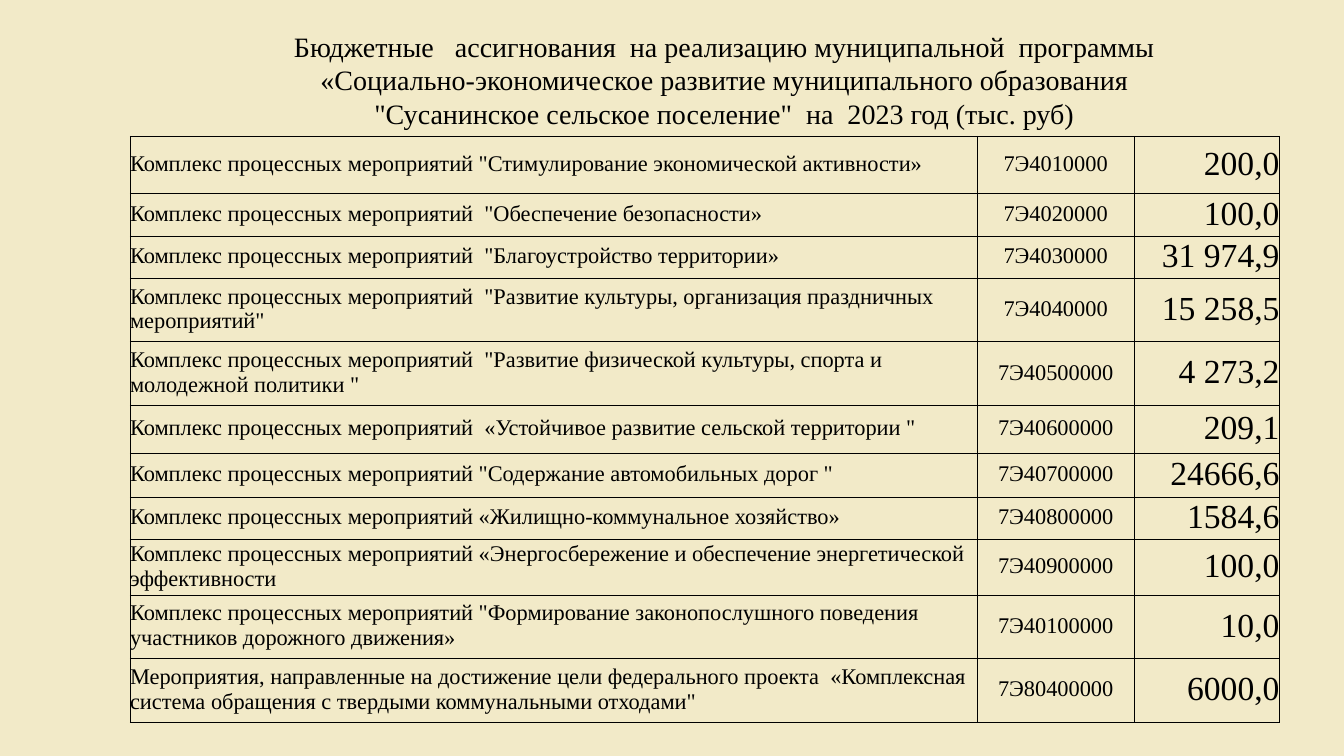
from pptx import Presentation as Deck
from pptx.dml.color import RGBColor as RGB
from pptx.enum.text import MSO_ANCHOR as Anchor, PP_ALIGN as Align
from pptx.oxml import parse_xml
from pptx.oxml.ns import nsdecls
from pptx.util import Pt

PX = 9144
SAND = RGB(0xF2, 0xEA, 0xC8)
BLACK = RGB(0, 0, 0)
FACE = "Times New Roman"
KIT = "Комплекс процессных мероприятий"
TITLE = (
    "Бюджетные   ассигнования  на реализацию муниципальной  программы "
    "«Социально-экономическое развитие муниципального образования "
    '"Сусанинское сельское поселение"  на  2023 год (тыс. руб)'
)
COLS = [
    (840, 16, Align.LEFT),
    (156, 16, Align.CENTER),
    (144, 24, Align.RIGHT),
]
ROWS = [
    (57, KIT + ' "Стимулирование экономической активности»', "7Э4010000", "200,0"),
    (38, KIT + '  "Обеспечение безопасности»', "7Э4020000", "100,0"),
    (36, KIT + '  "Благоустройство территории»', "7Э4030000", "31 974,9"),
    (63, KIT + '  "Развитие культуры, организация праздничных мероприятий"',
     "7Э4040000", "15 258,5"),
    (63, KIT + '  "Развитие физической культуры, спорта и молодежной политики "',
     "7Э40500000", "4 273,2"),
    (48, KIT + '  «Устойчивое развитие сельской территории "', "7Э40600000", "209,1"),
    (43, KIT + ' "Содержание автомобильных дорог "', "7Э40700000", "24666,6"),
    (28, KIT + " «Жилищно-коммунальное хозяйство»", "7Э40800000", "1584,6"),
    (38, KIT + " «Энергосбережение и обеспечение энергетической эффективности",
     "7Э40900000", "100,0"),
    (63, KIT + ' "Формирование законопослушного поведения участников дорожного движения»',
     "7Э40100000", "10,0"),
    (63, "Мероприятия, направленные на достижение цели федерального проекта  "
     '«Комплексная система обращения с твердыми коммунальными отходами"',
     "7Э80400000", "6000,0"),
]
FLAT = {"first_row": False, "horz_banding": False}
CELL = {
    "margin_left": 0,
    "margin_right": 0,
    "margin_top": 0,
    "margin_bottom": 2 * PX,
    "vertical_anchor": Anchor.MIDDLE,
}


def apply(item, vals):
    for name, val in vals.items():
        setattr(item, name, val)


def write(frame, text, size, align):
    para = frame.paragraphs[0]
    para.alignment = align
    run = para.add_run()
    run.text = text
    apply(run.font, {"name": FACE, "size": Pt(size)})
    run.font.color.rgb = BLACK


def border(cell):
    props = cell._tc.get_or_add_tcPr()
    for side in ("lnL", "lnR", "lnT", "lnB"):
        props.append(parse_xml(
            f'<a:{side} {nsdecls("a")} w="{Pt(0.5)}"><a:solidFill>'
            f'<a:srgbClr val="{BLACK}"/></a:solidFill></a:{side}>'
        ))


def add_title(slide):
    box = slide.shapes.add_textbox(247 * PX, 24 * PX, 943 * PX, 111 * PX)
    box.text_frame.word_wrap = True
    write(box.text_frame, TITLE, 20, Align.CENTER)


def add_grid(slide):
    wide = sum(col[0] for col in COLS)
    high = sum(row[0] for row in ROWS)
    grid = slide.shapes.add_table(
        len(ROWS), len(COLS), 129 * PX, 135 * PX, wide * PX, high * PX
    ).table
    apply(grid, FLAT)
    for col, (width, size, align) in zip(grid.columns, COLS):
        col.width = width * PX
    for r, (height, *texts) in enumerate(ROWS):
        grid.rows[r].height = height * PX
        for c, (text, (width, size, align)) in enumerate(zip(texts, COLS)):
            cell = grid.cell(r, c)
            apply(cell, CELL)
            border(cell)
            cell.fill.background()
            write(cell.text_frame, text, size, align)


def main():
    deck = Deck()
    apply(deck, {"slide_width": 1333 * PX, "slide_height": 750 * PX})
    slide = deck.slides.add_slide(deck.slide_layouts[6])
    slide.background.fill.solid()
    slide.background.fill.fore_color.rgb = SAND
    add_title(slide)
    add_grid(slide)
    deck.save("out.pptx")


if __name__ == "__main__":
    main()
